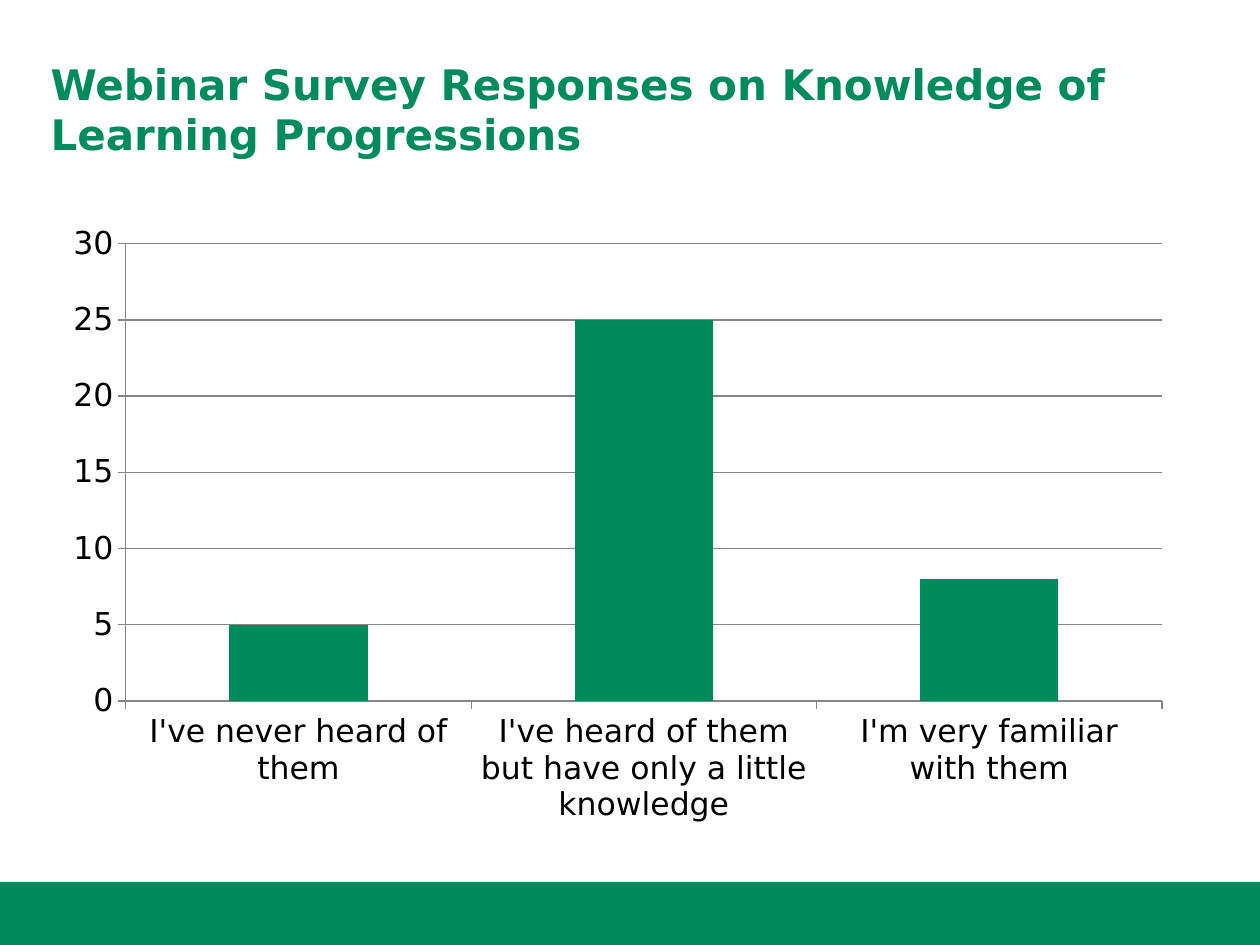
from pptx import Presentation
from pptx.chart.data import CategoryChartData
from pptx.dml.color import RGBColor
from pptx.enum.chart import XL_CHART_TYPE, XL_TICK_MARK
from pptx.enum.shapes import MSO_SHAPE
from pptx.enum.text import MSO_ANCHOR
from pptx.util import Cm, Pt

TITLE = "Webinar Survey Responses on Knowledge of Learning Progressions"
RESPONSES = [
    ("I've never heard of them", 5),
    ("I've heard of them but have only a little knowledge", 25),
    ("I'm very familiar with them", 8),
]

THEME = {
    "font": "DejaVu Sans",
    "green": RGBColor(0x00, 0x8B, 0x5D),
    "black": RGBColor(0x00, 0x00, 0x00),
    "gray": RGBColor(0x86, 0x86, 0x86),
    "title": Pt(24),
    "chart": Pt(18),
    "rule": Pt(0.75),
}

WIDTH, HEIGHT = Cm(25.4), Cm(19.05)
MARGIN = Cm(1.02)
CONTENT_WIDTH = Cm(22.86)
BAND_HEIGHT = Cm(1.27)


def set_format(target, values):
    for name, value in values.items():
        setattr(target, name, value)


def set_font(font, size, color, bold):
    set_format(font, {"name": THEME["font"], "size": size, "bold": bold})
    font.color.rgb = color


def set_line(line):
    line.color.rgb = THEME["gray"]
    line.width = THEME["rule"]


def add_band(s):
    sp = s.shapes.add_shape(
        MSO_SHAPE.RECTANGLE, 0, HEIGHT - BAND_HEIGHT, WIDTH, BAND_HEIGHT
    )
    sp.shadow.inherit = False
    sp.fill.solid()
    sp.fill.fore_color.rgb = THEME["green"]
    sp.line.fill.background()


def add_title(s):
    tf = s.shapes.add_textbox(MARGIN, Cm(1.09), CONTENT_WIDTH, Cm(2.49)).text_frame
    set_format(tf, {
        "word_wrap": True,
        "vertical_anchor": MSO_ANCHOR.TOP,
        "margin_left": 0,
        "margin_top": Cm(0.08),
        "margin_right": Cm(0.25),
        "margin_bottom": Cm(0.13),
    })
    r = tf.paragraphs[0].add_run()
    r.text = TITLE
    set_font(r.font, THEME["title"], THEME["green"], True)


def add_survey_chart(s):
    data = CategoryChartData()
    data.categories = [label for label, _ in RESPONSES]
    data.add_series("Series 1", [count for _, count in RESPONSES])
    chart = s.shapes.add_chart(
        XL_CHART_TYPE.COLUMN_CLUSTERED, MARGIN, Cm(4.29), CONTENT_WIDTH, Cm(12.57), data
    ).chart
    set_format(chart, {"has_legend": False, "has_title": False})
    set_font(chart.font, THEME["chart"], THEME["black"], False)

    plot = chart.plots[0]
    set_format(plot, {"gap_width": 150, "vary_by_categories": False})
    fill = plot.series[0].format.fill
    fill.solid()
    fill.fore_color.rgb = THEME["green"]

    for axis in (chart.category_axis, chart.value_axis):
        axis.major_tick_mark = XL_TICK_MARK.OUTSIDE
        set_line(axis.format.line)
    set_format(chart.value_axis, {
        "minimum_scale": 0,
        "maximum_scale": 30,
        "major_unit": 5,
        "has_major_gridlines": True,
    })
    set_line(chart.value_axis.major_gridlines.format.line)


def main():
    prs = Presentation()
    set_format(prs, {"slide_width": WIDTH, "slide_height": HEIGHT})
    s = prs.slides.add_slide(prs.slide_layouts[6])
    add_band(s)
    add_title(s)
    add_survey_chart(s)
    prs.save("out.pptx")


if __name__ == "__main__":
    main()
